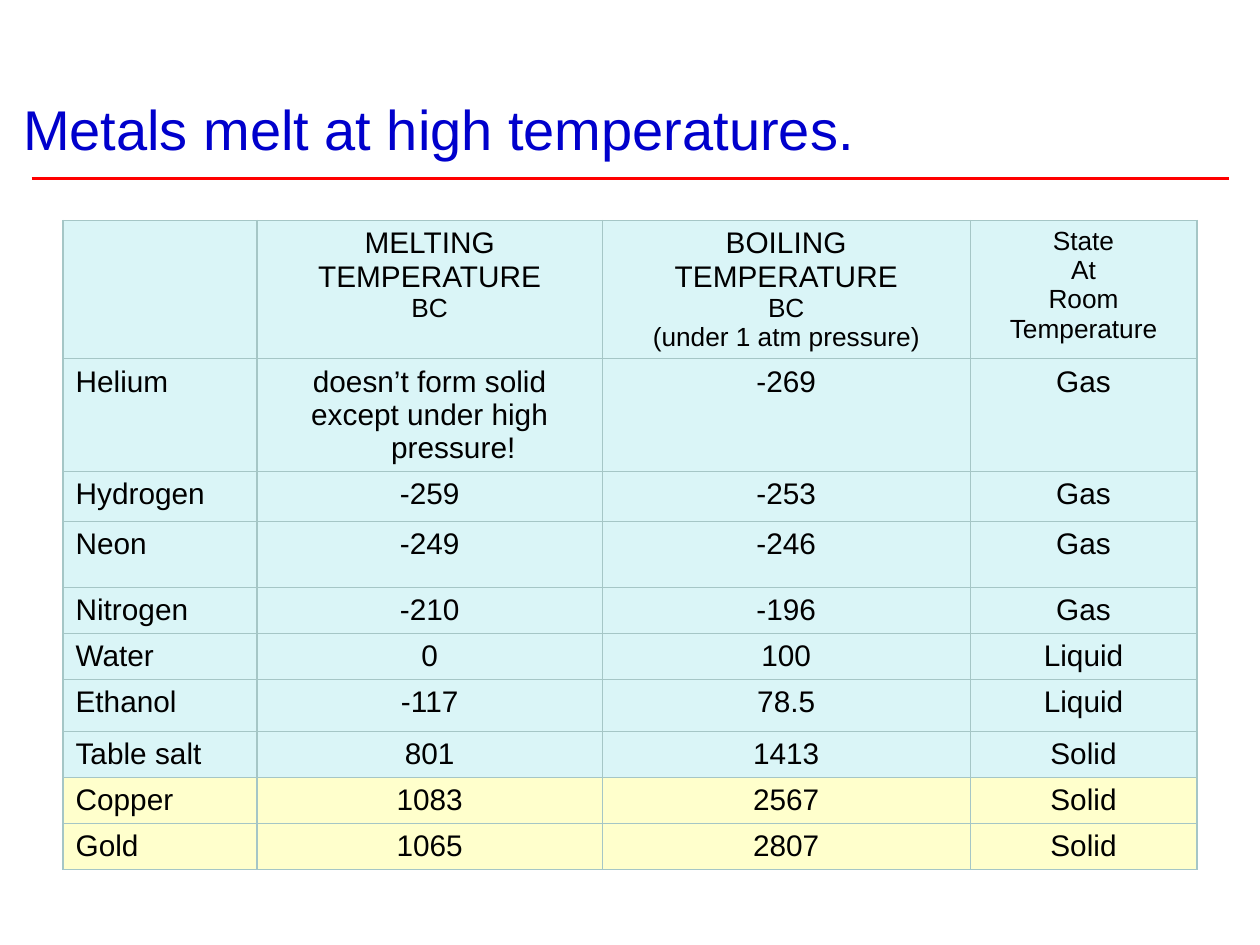
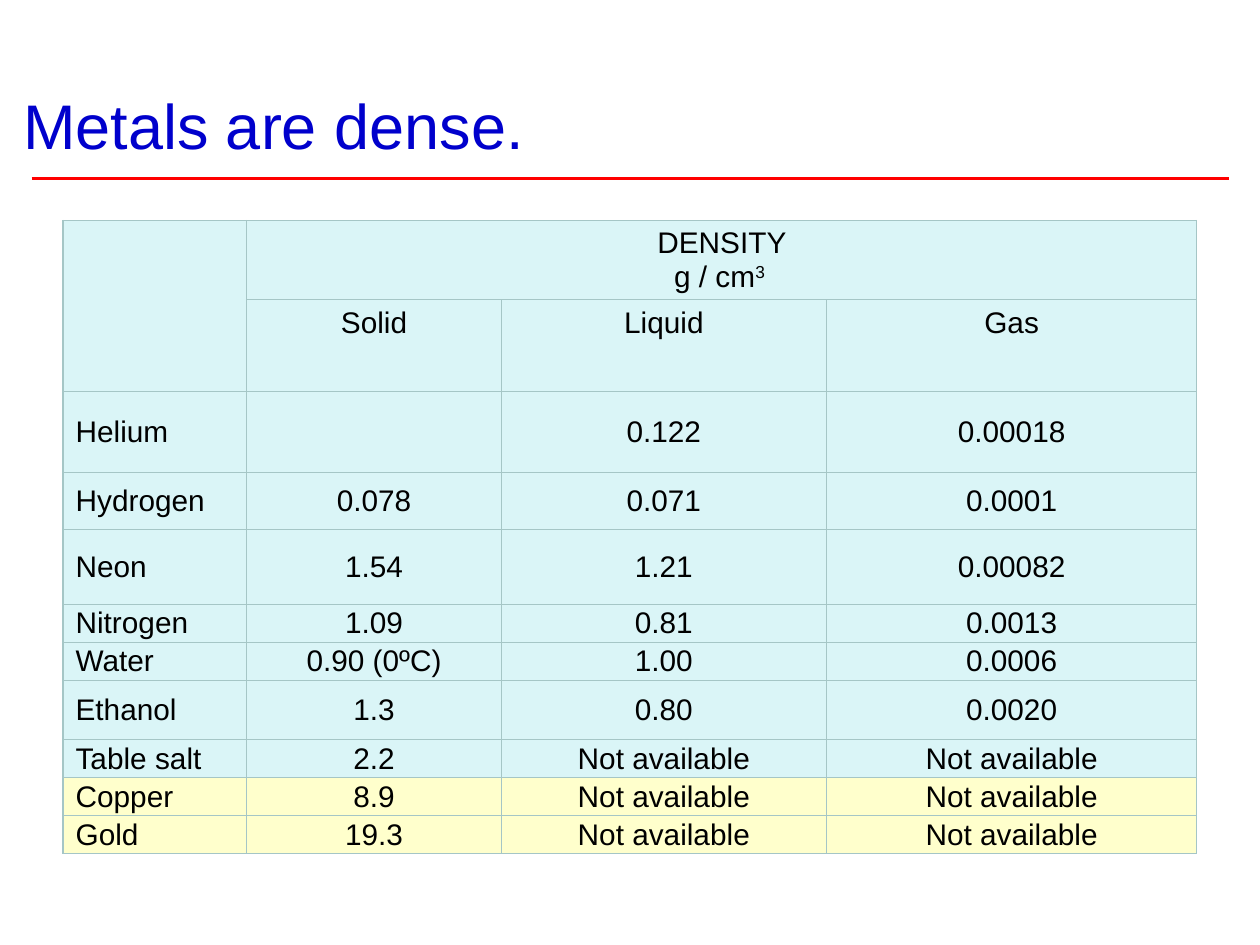
from dataclasses import dataclass
from typing import NamedTuple

from lxml import etree
from pptx import Presentation
from pptx.dml.color import RGBColor
from pptx.enum.shapes import MSO_CONNECTOR
from pptx.enum.text import MSO_ANCHOR, MSO_AUTO_SIZE, PP_ALIGN
from pptx.oxml.ns import qn
from pptx.util import Pt

STRAIGHT = MSO_CONNECTOR.STRAIGHT
TOP, MIDDLE, BOTTOM = MSO_ANCHOR.TOP, MSO_ANCHOR.MIDDLE, MSO_ANCHOR.BOTTOM
LEFT, CENTER = PP_ALIGN.LEFT, PP_ALIGN.CENTER
FIXED = MSO_AUTO_SIZE.NONE


@dataclass(frozen=True)
class Theme:
    font: str = "Arial"
    title: str = "0000CC"
    rule: str = "FF0000"
    text: str = "000000"
    border: str = "A5C6C6"
    plain: str = "DAF5F7"
    metal: str = "FFFFCC"
    body: float = 17
    small: float = 15


THEME = Theme()


class Line(NamedTuple):
    text: str
    size: float = THEME.body
    power: str = ""


Entry = str | tuple[Line, ...]


@dataclass(frozen=True)
class Grid:
    title: str
    size: float
    widths: tuple[float, ...]
    heights: tuple[float, ...]
    rows: tuple[tuple[Entry, ...], ...]
    heads: int
    hang: float = 0
    tight: bool = False
    spans: tuple[tuple[int, int, int, int], ...] = ()


METALS = ("Copper", "Gold")


def small(*texts: str) -> tuple[Line, ...]:
    return tuple(Line(text, THEME.small) for text in texts)


HEAT = Grid(
    title="Metals melt at high temperatures.",
    size=32,
    widths=(110.9, 197.3, 210.2, 129.6),
    heights=(79, 64.3, 28.6, 37.7, 26.3, 26.3, 29.7, 26.3, 26.3, 26.3),
    heads=1,
    hang=27,
    rows=(
        ("", (Line("MELTING"), Line("TEMPERATURE"), *small("BC")),
         (Line("BOILING"), Line("TEMPERATURE"),
          *small("BC", "(under 1 atm pressure)")),
         small("State", "At", "Room", "Temperature")),
        ("Helium", (Line("doesn’t form solid"),
                    Line("except under high pressure!")), "-269", "Gas"),
        ("Hydrogen", "-259", "-253", "Gas"),
        ("Neon", "-249", "-246", "Gas"),
        ("Nitrogen", "-210", "-196", "Gas"),
        ("Water", "0", "100", "Liquid"),
        ("Ethanol", "-117", "78.5", "Liquid"),
        ("Table salt", "801", "1413", "Solid"),
        ("Copper", "1083", "2567", "Solid"),
        ("Gold", "1065", "2807", "Solid"),
    ),
)

MASS = Grid(
    title="Metals are dense.",
    size=36,
    widths=(105.1, 145.4, 185.8, 211.7),
    heights=(45.4, 52.3, 46.3, 32.6, 42.9, 21.7, 21.7, 34, 21.7, 21.7, 21.7),
    heads=2,
    tight=True,
    spans=((0, 0, 1, 0), (0, 1, 0, 3)),
    rows=(
        ("", (Line("DENSITY"), Line("g / cm", power="3 ")), "", ""),
        ("", "Solid", "Liquid", "Gas"),
        ("Helium", "", "0.122", "0.00018"),
        ("Hydrogen", "0.078", "0.071", "0.0001"),
        ("Neon", "1.54", "1.21", "0.00082"),
        ("Nitrogen", "1.09", "0.81", "0.0013"),
        ("Water", "0.90 (0ºC)", "1.00", "0.0006"),
        ("Ethanol", "1.3", "0.80", "0.0020"),
        ("Table salt", "2.2", "Not available", "Not available"),
        ("Copper", "8.9", "Not available", "Not available"),
        ("Gold", "19.3", "Not available", "Not available"),
    ),
)


def style(para, size: float, color: str, align) -> None:
    para.alignment = align
    para.font.name = THEME.font
    para.font.size = Pt(size)
    para.font.color.rgb = RGBColor.from_string(color)


def head(slide, grid: Grid) -> None:
    title = slide.shapes.title
    title.left, title.top = Pt(6), Pt(0)
    title.width, title.height = Pt(708), Pt(96)
    frame = title.text_frame
    frame.text = grid.title
    frame.auto_size = FIXED
    frame.vertical_anchor = BOTTOM
    style(frame.paragraphs[0], grid.size, THEME.title, LEFT)
    rule = slide.shapes.add_connector(STRAIGHT, Pt(18), Pt(102), Pt(702), Pt(102))
    rule.line.color.rgb = RGBColor.from_string(THEME.rule)
    rule.line.width = Pt(1.5)
    etree.SubElement(rule._element.spPr, qn("a:effectLst"))


def edge(cell) -> None:
    props = cell._tc.get_or_add_tcPr()
    for spot, side in enumerate(("lnL", "lnR", "lnT", "lnB")):
        line = etree.Element(qn(f"a:{side}"), w=str(Pt(0.75)))
        fill = etree.SubElement(line, qn("a:solidFill"))
        etree.SubElement(fill, qn("a:srgbClr"), val=THEME.border)
        props.insert(spot, line)


def write(cell, entry: Entry, align, hang: float) -> None:
    lines = (Line(entry),) if isinstance(entry, str) else entry
    frame = cell.text_frame
    for spot, line in enumerate(lines):
        para = frame.add_paragraph() if spot else frame.paragraphs[0]
        para.add_run().text = line.text
        if line.power:
            power = para.add_run()
            power.text = line.power
            power._r.get_or_add_rPr().set("baseline", "30000")
        style(para, line.size, THEME.text, align)
        if hang:
            props = para._p.get_or_add_pPr()
            props.set("marL", str(Pt(hang)))
            props.set("indent", str(-Pt(hang)))


def fill(slide, grid: Grid) -> None:
    frame = slide.shapes.add_table(
        len(grid.rows), len(grid.widths), Pt(36), Pt(126),
        Pt(sum(grid.widths)), Pt(sum(grid.heights)))
    table = frame.table
    table.first_row = table.horz_banding = False
    for col, width in zip(table.columns, grid.widths):
        col.width = Pt(width)
    for row, height in zip(table.rows, grid.heights):
        row.height = Pt(height)
    for top, left, low, right in grid.spans:
        table.cell(top, left).merge(table.cell(low, right))
    for y, row in enumerate(grid.rows):
        color = THEME.metal if row[0] in METALS else THEME.plain
        tight = grid.tight and y >= grid.heads
        for x, entry in enumerate(row):
            cell = table.cell(y, x)
            cell.fill.solid()
            cell.fill.fore_color.rgb = RGBColor.from_string(color)
            edge(cell)
            cell.vertical_anchor = MIDDLE if tight else TOP
            if tight:
                cell.margin_top = cell.margin_bottom = Pt(0.9)
            if entry:
                write(cell, entry, CENTER if x else LEFT, grid.hang)


def main() -> None:
    deck = Presentation()
    deck.slide_width, deck.slide_height = Pt(720), Pt(540)
    for grid in (HEAT, MASS):
        slide = deck.slides.add_slide(deck.slide_layouts[5])
        head(slide, grid)
        fill(slide, grid)
    deck.save("out.pptx")


if __name__ == "__main__":
    main()
